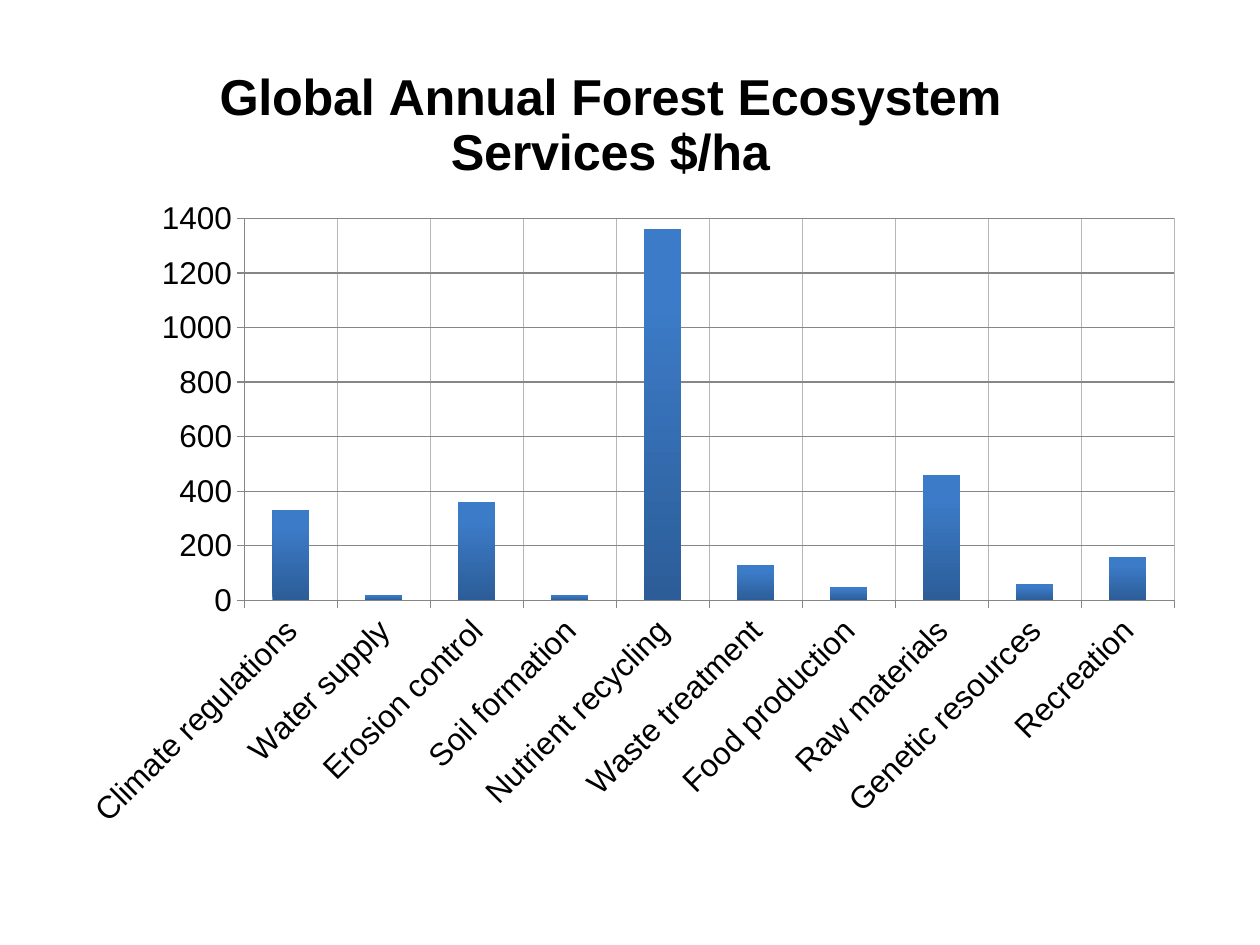
import pptx
import pptx.chart.data
import pptx.dml.color
import pptx.enum.chart
import pptx.oxml
import pptx.oxml.ns
import pptx.util

Pt = pptx.util.Pt
RGBColor = pptx.dml.color.RGBColor
qn = pptx.oxml.ns.qn

BLACK = RGBColor(0x00, 0x00, 0x00)
AXIS_GRAY = RGBColor(0x86, 0x86, 0x86)
GRID_GRAY = RGBColor(0xB7, 0xB7, 0xB7)
BAR_DARK = RGBColor(0x2C, 0x5D, 0x98)
BAR_LIGHT = RGBColor(0x3C, 0x7B, 0xC7)

SERVICES = {
    "Climate regulations": 330,
    "Water supply": 20,
    "Erosion control": 360,
    "Soil formation": 20,
    "Nutrient recycling": 1360,
    "Waste treatment": 130,
    "Food production": 50,
    "Raw materials": 460,
    "Genetic resources": 60,
    "Recreation": 160,
}


def set_layout(parent, index, target="", **fractions):
    """Place a chart part by fractions of the chart area."""
    old_layout = parent.find(qn("c:layout"))
    if old_layout is not None:
        parent.remove(old_layout)
    settings = f'<c:layoutTarget val="{target}"/>' if target else ""
    settings += '<c:xMode val="edge"/><c:yMode val="edge"/>'
    settings += "".join(f'<c:{name} val="{value}"/>' for name, value in fractions.items())
    parent.insert(index, pptx.oxml.parse_xml(
        f'<c:layout {pptx.oxml.ns.nsdecls("c")}>'
        f"<c:manualLayout>{settings}</c:manualLayout></c:layout>"))


presentation = pptx.Presentation()
presentation.slide_width = Pt(720)
presentation.slide_height = Pt(540)
slide = presentation.slides.add_slide(presentation.slide_layouts[6])

# Chart
chart_data = pptx.chart.data.CategoryChartData()
chart_data.categories = list(SERVICES)
chart_data.add_series("Series 1", list(SERVICES.values()))
chart = slide.shapes.add_chart(
    pptx.enum.chart.XL_CHART_TYPE.COLUMN_CLUSTERED,
    Pt(36), Pt(18), Pt(648), Pt(464.4), chart_data).chart
chart.has_legend = False
chart.font.name = "Calibri"
chart.font.size = Pt(18)
chart.font.color.rgb = BLACK

# Chart title
chart.has_title = True
title = chart.chart_title
title.include_in_layout = False
title.text_frame.text = "Global Annual Forest Ecosystem Services $/ha"
title_font = title.text_frame.paragraphs[0].font
title_font.name = "Arial"
title_font.size = Pt(28.8)
title_font.bold = True
title_font.color.rgb = BLACK
set_layout(title._element, 1, x=0.13, y=0.03)

# Columns
plot = chart.plots[0]
plot.gap_width = 150
plot.vary_by_categories = False
fill = plot.series[0].format.fill
fill.gradient()
fill.gradient_angle = 90
for stop, color, position in zip(fill.gradient_stops, (BAR_DARK, BAR_LIGHT), (0, 0.8)):
    stop.color.rgb = color
    stop.position = position
set_layout(chart._chartSpace.chart.plotArea, 0, "inner", x=0.16, y=0.23, w=0.82, h=0.47)

# Axes and gridlines
for axis, grid_color in ((chart.category_axis, GRID_GRAY), (chart.value_axis, AXIS_GRAY)):
    axis.has_major_gridlines = True
    axis.major_tick_mark = pptx.enum.chart.XL_TICK_MARK.OUTSIDE
    axis.minor_tick_mark = pptx.enum.chart.XL_TICK_MARK.NONE
    for line, color in ((axis.major_gridlines.format.line, grid_color),
                        (axis.format.line, AXIS_GRAY)):
        line.color.rgb = color
        line.width = Pt(0.75)
    label_font = axis.tick_labels.font
    label_font.name = "Arial"
    label_font.size = Pt(18)
    label_font.color.rgb = BLACK

chart.value_axis.minimum_scale = 0
chart.value_axis.maximum_scale = 1400
chart.value_axis.major_unit = 200

# Slanted category labels
label_body = chart.category_axis._element.find(qn("c:txPr")).find(qn("a:bodyPr"))
label_body.set("rot", "-2700000")
label_body.set("vert", "horz")

presentation.save("out.pptx")
